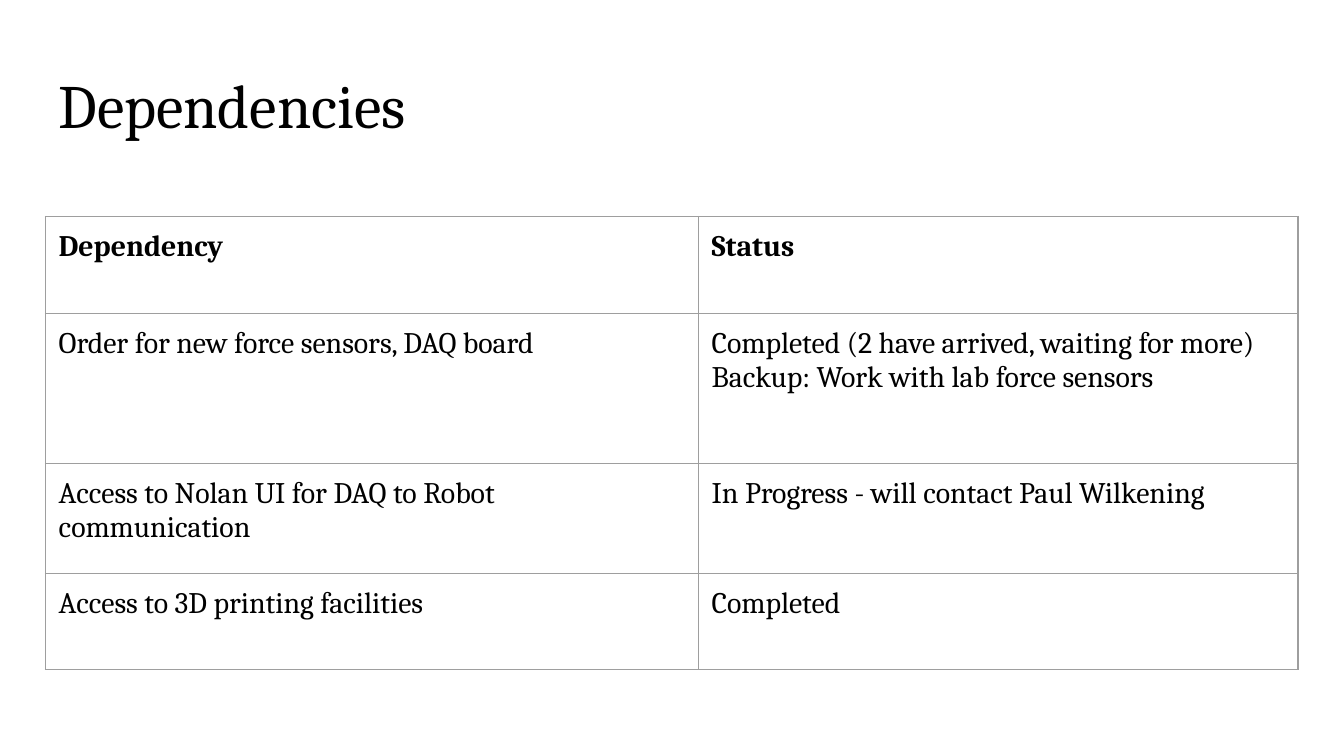
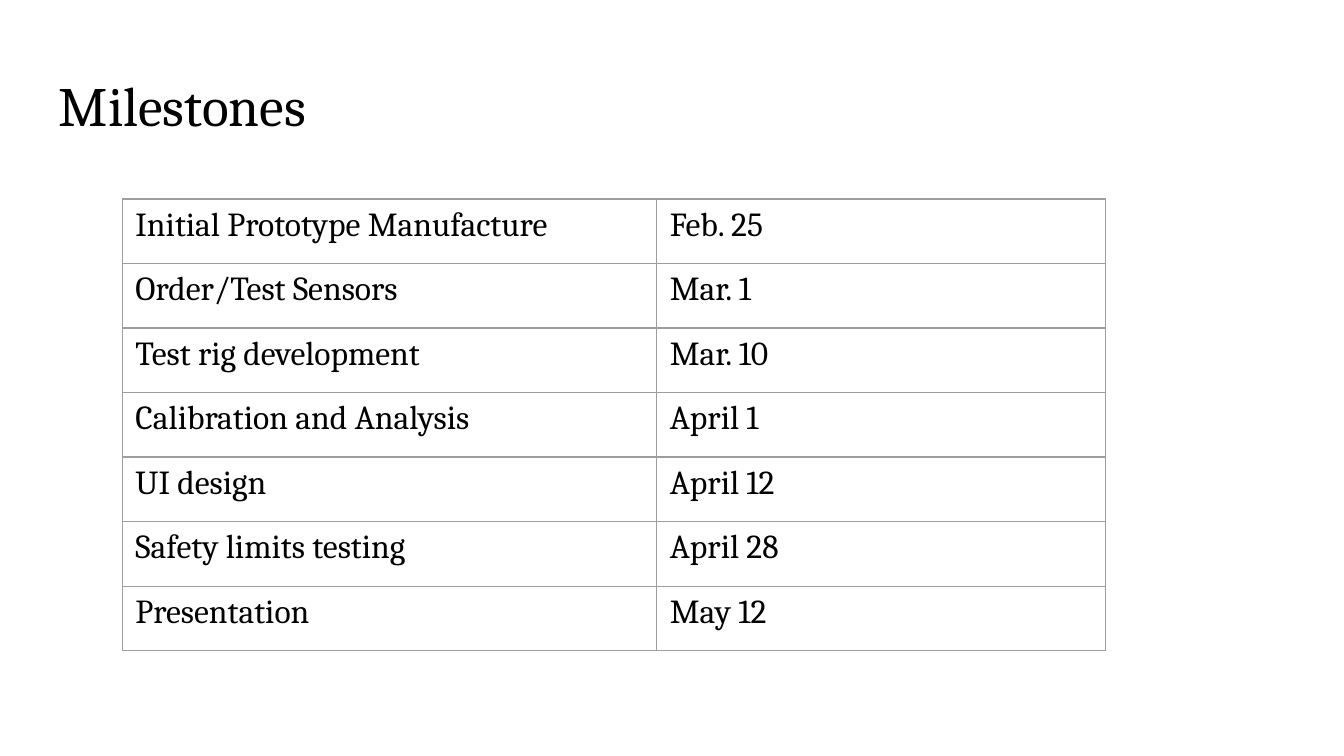
"""Build the dependencies and milestones slides."""
from lxml import etree
from pptx import Presentation
from pptx.dml.color import RGBColor
from pptx.enum import text
from pptx.oxml.ns import qn
from pptx.util import Cm, Pt

COLOURS = {"ink": "000000", "grid": "9E9E9E"}
FONT = "Cambria"
LEFT, WIDTH = Cm(0.86), Cm(23.67)
INSET = Cm(0.25)
TITLE_FRAME = {
    "margin_left": INSET, "margin_right": INSET,
    "margin_top": INSET, "margin_bottom": INSET,
    "vertical_anchor": text.MSO_ANCHOR.TOP,
    "auto_size": text.MSO_AUTO_SIZE.NONE, "word_wrap": True,
}
DEPENDENCIES = [
    ("Dependency", "Status"),
    ("Order for new force sensors, DAQ board",
     "Completed (2 have arrived, waiting for more)\nBackup: Work with lab force sensors"),
    ("Access to Nolan UI for DAQ to Robot communication",
     "In Progress - will contact Paul Wilkening"),
    ("Access to 3D printing facilities", "Completed"),
]
MILESTONES = [
    ("Initial Prototype Manufacture", "Feb. 25"),
    ("Order/Test Sensors", "Mar. 1"),
    ("Test rig development", "Mar. 10"),
    ("Calibration and Analysis", "April 1"),
    ("UI design", "April 12"),
    ("Safety limits testing", "April 28"),
    ("Presentation", "May 12"),
]


def apply_format(target, values):
    """Set each named attribute on the target."""
    for name, value in values.items():
        setattr(target, name, value)


def write(paragraph, wording, size, bold=False):
    """Fill a paragraph with left-aligned text in the shared font."""
    paragraph.text = wording
    paragraph.alignment = text.PP_ALIGN.LEFT
    for run in paragraph.runs:
        apply_format(run.font, {"name": FONT, "size": Pt(size), "bold": bold})
        run.font.color.rgb = RGBColor.from_string(COLOURS["ink"])


def add_titled_slide(deck, wording, top, size):
    """Add a title-only slide and place its title."""
    slide = deck.slides.add_slide(deck.slide_layouts[5])
    title = slide.shapes.title
    apply_format(title, {"left": LEFT, "top": top, "width": WIDTH, "height": Cm(1.6)})
    apply_format(title.text_frame, TITLE_FRAME)
    heading = title.text_frame.paragraphs[0]
    write(heading, wording, size)
    heading.line_spacing = 0.9
    return slide


def draw_borders(cell):
    """Rule all four sides of a cell with the grid colour."""
    properties = cell._tc.get_or_add_tcPr()
    for position, side in enumerate(("a:lnL", "a:lnR", "a:lnT", "a:lnB")):
        rule = etree.Element(qn(side), w=str(Pt(0.75)))
        fill = etree.SubElement(rule, qn("a:solidFill"))
        etree.SubElement(fill, qn("a:srgbClr"), val=COLOURS["grid"])
        properties.insert(position, rule)


def add_grid(slide, entries, left, top, widths, heights, size, padding, header=False):
    """Add an unfilled ruled table, with an optional bold header row."""
    frame = slide.shapes.add_table(
        len(entries), len(widths), left, top, sum(widths), sum(heights))
    table = frame.table
    apply_format(table, {"first_row": header, "horz_banding": False})
    for column, width in zip(table.columns, widths):
        column.width = width
    for index, (row, height, entry) in enumerate(zip(table.rows, heights, entries)):
        row.height = height
        for cell, wording in zip(row.cells, entry):
            apply_format(cell, {"margin_left": INSET, "margin_right": INSET,
                                "margin_top": padding, "margin_bottom": padding})
            write(cell.text_frame.paragraphs[0], wording, size, header and index == 0)
            cell.fill.background()
            draw_borders(cell)


def main():
    """Build and save both slides."""
    deck = Presentation()
    apply_format(deck, {"slide_width": Cm(25.4), "slide_height": Cm(14.29)})

    dependencies = add_titled_slide(deck, "Dependencies", Cm(1.17), 33)
    add_grid(dependencies, DEPENDENCIES, LEFT, Cm(4.09), [Cm(12.34), Cm(11.33)],
             [Cm(1.83), Cm(2.84), Cm(2.08), Cm(1.81)], 16, INSET, header=True)

    milestones = add_titled_slide(deck, "Milestones", Cm(1.24), 29.7)
    add_grid(milestones, MILESTONES, Cm(2.31), Cm(3.76), [Cm(10.1), Cm(8.48)],
             [Cm(1.22)] * len(MILESTONES), 18, Cm(0.13))

    deck.save("out.pptx")


if __name__ == "__main__":
    main()
